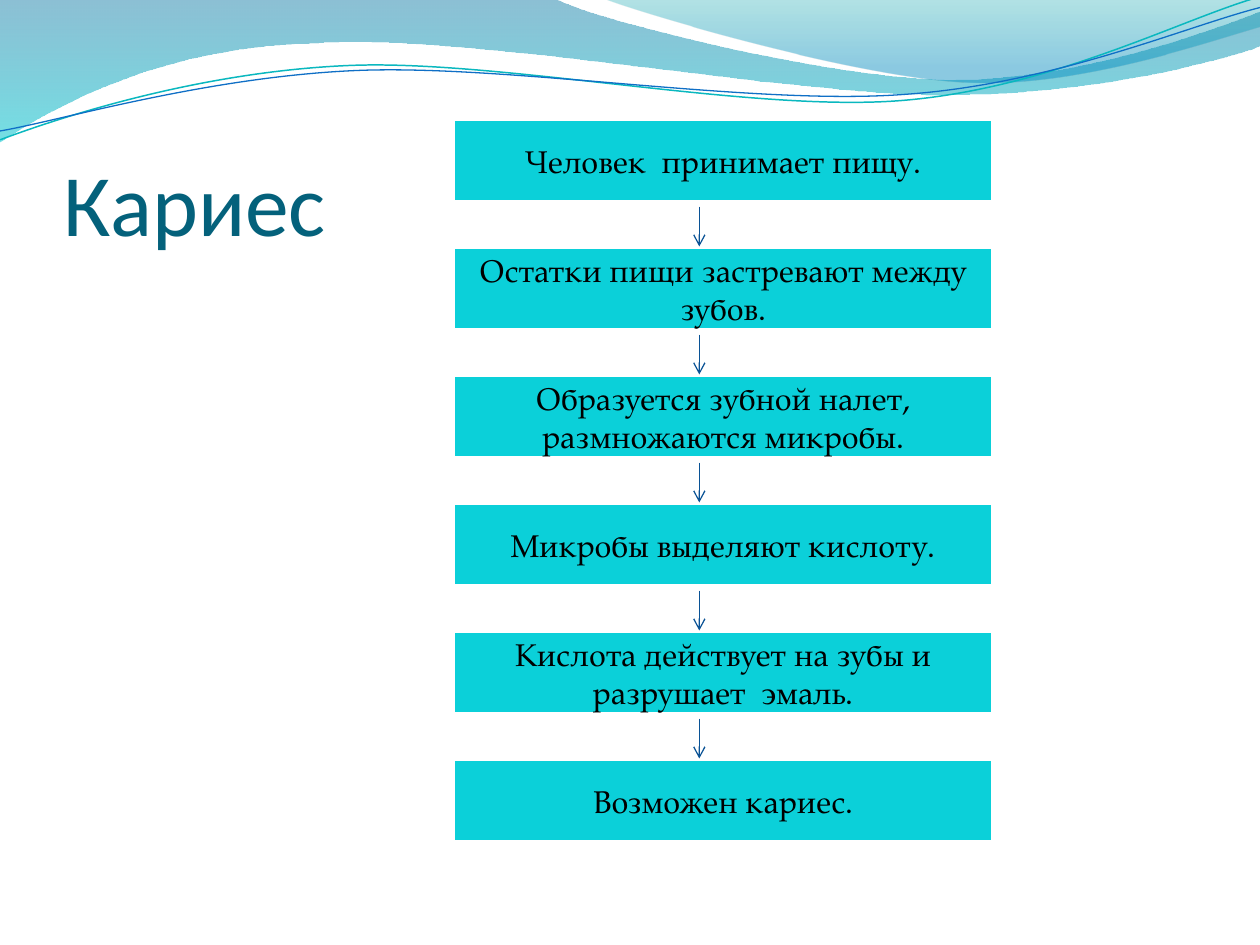
from dataclasses import dataclass
from math import cos, radians, sin

from lxml import etree
from pptx import Presentation
from pptx.dml.color import RGBColor
from pptx.enum.shapes import MSO_CONNECTOR, MSO_SHAPE
from pptx.enum.text import MSO_ANCHOR, MSO_AUTO_SIZE, PP_ALIGN
from pptx.oxml.ns import qn
from pptx.util import Inches, Pt

STRAIGHT = MSO_CONNECTOR.STRAIGHT
PROCESS = MSO_SHAPE.FLOWCHART_PROCESS
MIDDLE, BOTTOM = MSO_ANCHOR.MIDDLE, MSO_ANCHOR.BOTTOM
CENTER, LEFT = PP_ALIGN.CENTER, PP_ALIGN.LEFT
NO_AUTOFIT = MSO_AUTO_SIZE.NONE


@dataclass(frozen=True)
class Theme:
    title_font: str = "Calibri"
    body_font: str = "TeX Gyre Pagella"
    title_size: float = 50
    body_size: float = 18
    title: str = "04617B"
    text: str = "000000"
    box: str = "0BD0D9"
    border: str = "FFFFFF"
    arrow: str = "095295"


THEME = Theme()

# Flow grid in inches: one column, equal rows between first and last top
BOX_LEFT, BOX_WIDTH, BOX_HEIGHT = 3.59, 4.3, 0.67
FIRST_TOP, LAST_TOP = 0.94, 6.02
ARROW_X, ARROW_GAP = 5.55, 0.03

STEPS = [
    "Человек  принимает пищу.",
    "Остатки пищи застревают между зубов.",
    "Образуется зубной налет, размножаются микробы.",
    "Микробы выделяют кислоту.",
    "Кислота действует на зубы и разрушает  эмаль.",
    "Возможен кариес.",
]

# Wave segments: one point is a straight line, three a Bézier curve.
# Gradient stops: position, colour, opacity in percent.
FILLED_WAVES = [
    ([[(0, 0)], [(4.4, -0.01)],
      [(4.76, 0.17), (6.64, 0.63), (7.58, 0.63)],
      [(8.53, 0.63), (9.58, 0.26), (10, 0.09)], [(10.01, 0.36)],
      [(9.83, 0.44), (8.7, 0.76), (7.46, 0.75)],
      [(6.22, 0.75), (3.82, 0.28), (2.57, 0.34)],
      [(1.29, 0.36), (0.46, 0.83), (-0.01, 1.13)]],
     [(0, "0074A1", 45), (1, "00C6CF", 55)]),
    ([[(4.79, -0.01)],
      [(5.09, 0.11), (6.82, 0.62), (7.69, 0.65)],
      [(8.56, 0.69), (9.61, 0.32), (10, 0.21)], [(10, 0)]],
     [(0, "00A1A9", 30), (0.8, "008BBF", 45)]),
]
# Segments as they appear after the turn, centre of the turn, colour, width
LINE_WAVES = [
    ([[(0, 1.11)], [(0.48, 0.93), (1.58, 0.57), (2.77, 0.52)],
      [(3.95, 0.47), (5.93, 0.89), (7.13, 0.8)],
      [(8.33, 0.71), (9.38, 0.15), (9.98, -0.02)]], (4.99, 0.58), "0AB8BF", 0.85),
    ([[(0, 1.04)], [(0.47, 0.96), (1.64, 0.61), (2.83, 0.56)],
      [(4.03, 0.51), (5.97, 0.84), (7.17, 0.75)],
      [(8.36, 0.67), (9.41, 0.21), (10, 0.06)]], (5, 0.59), "0F6FC6", 0.75),
]
WAVE_TURN = 357.3


def rgb(value):
    return RGBColor.from_string(value)


def set_all(target, values):
    for name, value in values.items():
        setattr(target, name, value)


def set_line(shape, color, width):
    shape.line.color.rgb = rgb(color)
    shape.line.width = Pt(width)


def write(shape, text, frame_format, align, font_format, color):
    frame = shape.text_frame
    set_all(frame, {"word_wrap": True, "auto_size": NO_AUTOFIT, **frame_format})
    para = frame.paragraphs[0]
    para.alignment = align
    span = para.add_run()
    span.text = text
    set_all(span.font, font_format)
    span.font.color.rgb = rgb(color)


def turn(point, center, degrees):
    angle = radians(degrees)
    dx, dy = point[0] - center[0], point[1] - center[1]
    return (center[0] + dx * cos(angle) - dy * sin(angle),
            center[1] + dx * sin(angle) + dy * cos(angle))


def add_wave(page, segments, close):
    """Build the outline through the end points, then bend its curved parts."""
    segments = [[(Inches(x), Inches(y)) for x, y in part] for part in segments]
    builder = page.shapes.build_freeform(*segments[0][0])
    builder.add_line_segments([part[-1] for part in segments[1:]], close=close)
    wave = builder.convert_to_shape()
    wave.shadow.inherit = False
    lines = list(wave._element.iter(qn("a:lnTo")))
    for line, part in zip(lines, segments[1:]):
        if len(part) == 1:
            continue
        line.clear()
        curve = etree.Element(qn("a:cubicBezTo"))
        for x, y in part:
            etree.SubElement(curve, qn("a:pt"),
                             x=str(x - wave.left), y=str(y - wave.top))
        line.getparent().replace(line, curve)
    return wave


def add_filled_wave(page, segments, stops):
    wave = add_wave(page, segments, close=True)
    wave.line.fill.background()
    wave.fill.gradient()
    wave.fill.gradient_angle = 270
    for stop, (position, color, _) in zip(wave.fill.gradient_stops, stops):
        stop.position = position
        stop.color.rgb = rgb(color)
    colors = list(wave._element.spPr.iter(qn("a:srgbClr")))
    for element, (_, _, opacity) in zip(colors, stops):
        etree.SubElement(element, qn("a:alpha"), val=str(opacity * 1000))


def add_line_wave(page, segments, center, color, width):
    level = [[turn(point, center, -WAVE_TURN) for point in part] for part in segments]
    wave = add_wave(page, level, close=False)
    wave.rotation = WAVE_TURN
    wave.fill.background()
    set_line(wave, color, width)


def add_title(page, text):
    title = page.shapes.title
    set_all(title, {"left": Inches(0.5), "top": Inches(0.77),
                    "width": Inches(9), "height": Inches(1.25)})
    write(title, text,
          {"vertical_anchor": BOTTOM, "margin_left": 0, "margin_right": 0,
           "margin_top": Inches(0.05), "margin_bottom": 0},
          LEFT, {"name": THEME.title_font, "size": Pt(THEME.title_size)}, THEME.title)
    # Bring the title in front of the waves
    page.shapes._spTree.append(title._element)


def add_step(page, top, text):
    box = page.shapes.add_shape(PROCESS, Inches(BOX_LEFT), Inches(top),
                                Inches(BOX_WIDTH), Inches(BOX_HEIGHT))
    box.shadow.inherit = False
    box.fill.solid()
    box.fill.fore_color.rgb = rgb(THEME.box)
    set_line(box, THEME.border, 3)
    write(box, text, {"vertical_anchor": MIDDLE}, CENTER,
          {"name": THEME.body_font, "size": Pt(THEME.body_size)}, THEME.text)


def add_arrow(page, start, end):
    arrow = page.shapes.add_connector(STRAIGHT, Inches(ARROW_X), Inches(start),
                                      Inches(ARROW_X), Inches(end))
    set_line(arrow, THEME.arrow, 0.75)
    etree.SubElement(arrow.line._get_or_add_ln(), qn("a:tailEnd"), type="arrow")
    etree.SubElement(arrow._element.spPr, qn("a:effectLst"))


def main():
    deck = Presentation()
    deck.slide_width, deck.slide_height = Inches(10), Inches(7.5)
    page = deck.slides.add_slide(deck.slide_layouts[5])

    # Header waves
    for wave in FILLED_WAVES:
        add_filled_wave(page, *wave)
    for wave in LINE_WAVES:
        add_line_wave(page, *wave)

    add_title(page, "Кариес")

    # Flow of steps, then the arrows between them
    pitch = (LAST_TOP - FIRST_TOP) / (len(STEPS) - 1)
    tops = [FIRST_TOP + row * pitch for row in range(len(STEPS))]
    for top, text in zip(tops, STEPS):
        add_step(page, top, text)
    for top, next_top in zip(tops, tops[1:]):
        add_arrow(page, top + BOX_HEIGHT + ARROW_GAP, next_top)

    deck.save("out.pptx")


if __name__ == "__main__":
    main()
